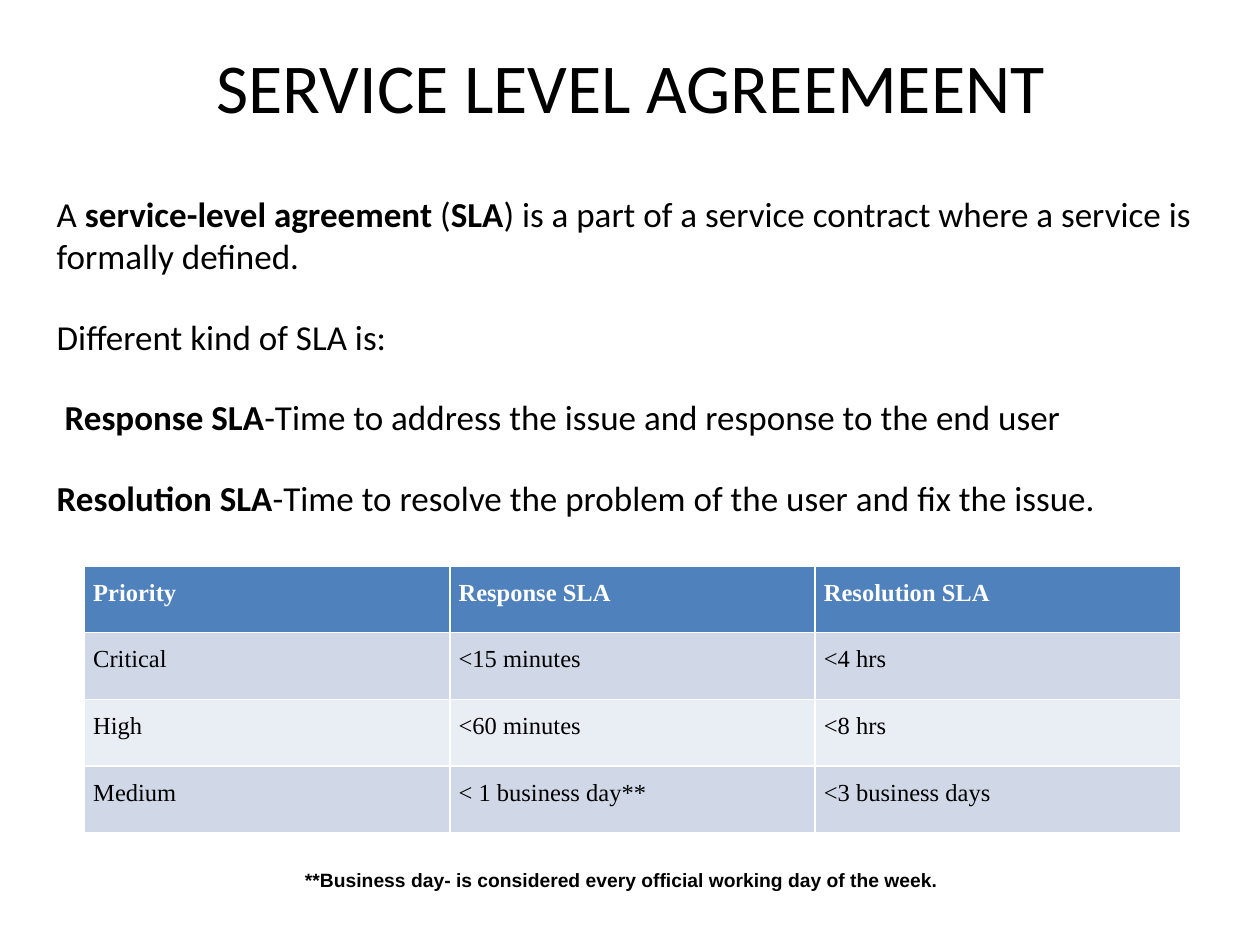
from pptx import Presentation
from pptx.dml.color import RGBColor
from pptx.enum import text
from pptx.util import Inches, Pt

BLACK = RGBColor(0x00, 0x00, 0x00)
WHITE = RGBColor(0xFF, 0xFF, 0xFF)
HEADER = RGBColor(0x4F, 0x81, 0xBD)
BANDS = [RGBColor(0xD0, 0xD8, 0xE8), RGBColor(0xE9, 0xED, 0xF4)]

# Paragraphs as (wording, bold) runs
DEFINITIONS = [
    [("A ", False), ("service-level agreement", True), (" (", False), ("SLA", True),
     (") is a part of a service contract where a service is formally defined.", False)],
    [("Different kind of SLA is:", False)],
    [(" ", False), ("Response SLA", True),
     ("-Time to address the issue and response to the end user", False)],
    [("Resolution SLA", True),
     ("-Time to resolve the problem of the user and fix the issue.", False)],
]

SLA_ROWS = [
    ["Priority", "Response SLA", "Resolution SLA"],
    ["Critical", "<15 minutes", "<4 hrs"],
    ["High", "<60 minutes", "<8 hrs"],
    ["Medium", "< 1 business day**", "<3 business days"],
]


def set_font(p, name, size, color=BLACK, bold=None):
    p.font.name = name
    p.font.size = Pt(size)
    p.font.color.rgb = color
    p.font.bold = bold


def add_text(slide, box, paragraphs, name, size, align=text.PP_ALIGN.LEFT,
             anchor=text.MSO_ANCHOR.TOP, before=0, inset=(0, 0)):
    tf = slide.shapes.add_textbox(*map(Inches, box)).text_frame
    tf.word_wrap = True
    tf.vertical_anchor = anchor
    tf.margin_left = tf.margin_right = Inches(inset[0])
    tf.margin_top = tf.margin_bottom = Inches(inset[1])
    for i, runs in enumerate(paragraphs):
        p = tf.add_paragraph() if i else tf.paragraphs[0]
        p.alignment = align
        p.space_before = Pt(before)
        set_font(p, name, size)
        for wording, bold in runs:
            r = p.add_run()
            r.text = wording
            r.font.bold = bold


def add_sla_table(slide, box, rows):
    frame = slide.shapes.add_table(len(rows), len(rows[0]), *map(Inches, box))
    for i, row in enumerate(rows):
        for j, wording in enumerate(row):
            cell = frame.table.cell(i, j)
            cell.fill.solid()
            cell.fill.fore_color.rgb = BANDS[(i - 1) % 2] if i else HEADER
            cell.margin_left = cell.margin_right = Inches(0.07)
            cell.margin_top = cell.margin_bottom = 0
            cell.text = wording
            p = cell.text_frame.paragraphs[0]
            p.line_spacing = 1.5
            set_font(p, "Times New Roman", 14, BLACK if i else WHITE, i == 0)


def main():
    prs = Presentation()
    prs.slide_width, prs.slide_height = Inches(10), Inches(7.5)
    slide = prs.slides.add_slide(prs.slide_layouts[6])

    # Definitions
    add_text(slide, (0.45, 1.53, 9.25, 5.34), DEFINITIONS, "Calibri", 20, before=22)

    # Title
    add_text(slide, (0.45, 0.34, 9.11, 0.67), [[("SERVICE LEVEL AGREEMEENT", False)]],
             "Calibri", 40, text.PP_ALIGN.CENTER, text.MSO_ANCHOR.MIDDLE)

    # Response and resolution times
    add_sla_table(slide, (0.67, 4.49, 8.7, 2.12), SLA_ROWS)

    # Footnote
    footnote = "**Business day- is considered every official working day of the week. "
    add_text(slide, (2.16, 6.84, 5.59, 0.29), [[(footnote, True)]], "Arial", 11,
             text.PP_ALIGN.CENTER, before=2.2, inset=(0.1, 0.05))

    prs.save("out.pptx")


if __name__ == "__main__":
    main()
